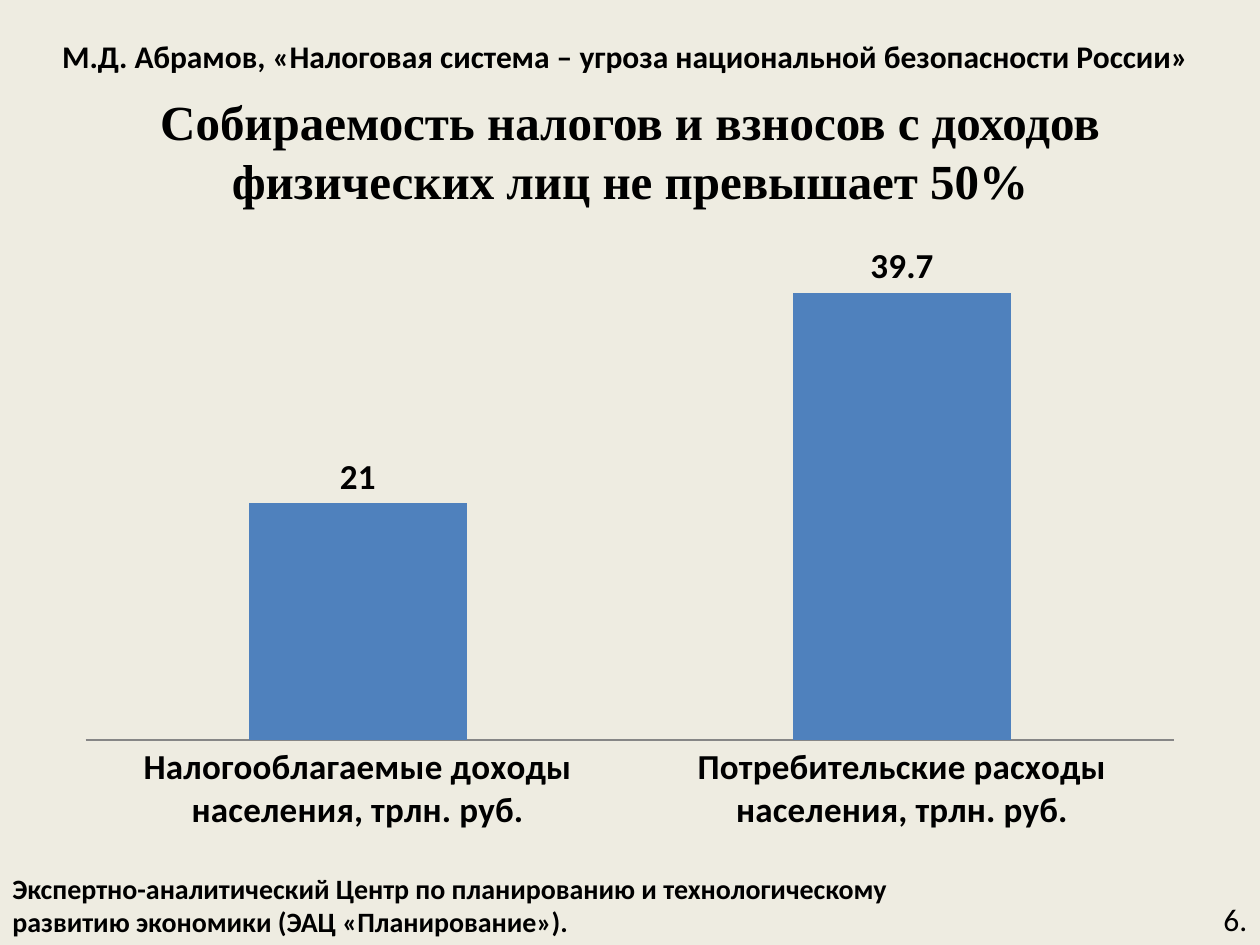
from pptx import Presentation
from pptx.chart.data import CategoryChartData
from pptx.dml.color import RGBColor
from pptx.enum.chart import XL_CHART_TYPE, XL_LABEL_POSITION, XL_TICK_MARK
from pptx.enum.text import MSO_ANCHOR, MSO_AUTO_SIZE, PP_ALIGN
from pptx.util import Pt

COLORS = {"background": "EEECE1", "text": "000000", "bar": "4F81BD", "axis": "868686"}
BODY_FONT, TITLE_FONT = "Calibri", "Times New Roman"


def color(name):
    return RGBColor.from_string(COLORS[name])


def place(sp, box):
    sp.left, sp.top, sp.width, sp.height = (Pt(v) for v in box)


def format_font(font, size, bold=False, name=BODY_FONT):
    font.size, font.bold, font.name = Pt(size), bold, name
    font.color.rgb = color("text")


def write_text(sp, text, size=18, bold=False, font=BODY_FONT, align=PP_ALIGN.LEFT,
               anchor=MSO_ANCHOR.TOP, wrap=True, grow=False, margin_top=3.6):
    tf = sp.text_frame
    tf.auto_size = MSO_AUTO_SIZE.SHAPE_TO_FIT_TEXT if grow else MSO_AUTO_SIZE.NONE
    tf.word_wrap = wrap
    tf.vertical_anchor = anchor
    tf.margin_top = Pt(margin_top)
    for i, line in enumerate(text.split("\n")):
        p = tf.add_paragraph() if i else tf.paragraphs[0]
        p.alignment = align
        r = p.add_run()
        r.text = line
        format_font(r.font, size, bold, font)


def add_text(s, box, text, **style):
    sp = s.shapes.add_textbox(*(Pt(v) for v in box))
    write_text(sp, text, **style)


def add_title(s, box):
    place(s.shapes.title, box)
    write_text(s.shapes.title,
               "Собираемость налогов и взносов с доходов физических лиц не превышает 50%",
               size=28, bold=True, font=TITLE_FONT, align=PP_ALIGN.CENTER, margin_top=17)


def add_income_chart(s, box):
    data = CategoryChartData()
    data.categories = ["Налогооблагаемые доходы населения, трлн. руб.",
                       "Потребительские расходы населения, трлн. руб."]
    data.add_series("Series 1", (21, 39.7))
    chart = s.shapes.add_chart(XL_CHART_TYPE.COLUMN_CLUSTERED,
                               *(Pt(v) for v in box), data).chart
    chart.has_legend = chart.has_title = False
    format_font(chart.font, 10)

    # Axes
    cat_axis, val_axis = chart.category_axis, chart.value_axis
    cat_axis.major_tick_mark = cat_axis.minor_tick_mark = XL_TICK_MARK.NONE
    cat_axis.format.line.color.rgb = color("axis")
    format_font(cat_axis.tick_labels.font, 20, bold=True)
    val_axis.minimum_scale, val_axis.maximum_scale = 0, 45
    val_axis.has_major_gridlines = False
    val_axis.visible = False

    # Columns and their values
    plot = chart.plots[0]
    plot.gap_width, plot.overlap = 150, -25
    plot.vary_by_categories = False
    series = plot.series[0]
    series.format.fill.solid()
    series.format.fill.fore_color.rgb = color("bar")
    labels = series.data_labels
    labels.show_value = True
    labels.position = XL_LABEL_POSITION.OUTSIDE_END
    format_font(labels.font, 20, bold=True)


def add_footer(s, source_box, number_box):
    add_text(s, source_box,
             "Экспертно-аналитический Центр по планированию и технологическому\n"
             "развитию экономики (ЭАЦ «Планирование»).",
             size=16, bold=True, anchor=MSO_ANCHOR.MIDDLE, wrap=False, grow=True)
    add_text(s, number_box, "6.", wrap=False, grow=True)


def main():
    prs = Presentation()
    prs.slide_width, prs.slide_height = Pt(720), Pt(540)
    s = prs.slides.add_slide(prs.slide_layouts[5])
    s.background.fill.solid()
    s.background.fill.fore_color.rgb = color("background")

    add_title(s, (36, 35.3, 648, 59))
    add_footer(s, (0, 494, 523.4, 46), (692, 511, 28, 29))
    add_income_chart(s, (36, 126, 648, 356.4))
    # Author and book
    add_text(s, (8.6, 9.4, 697.7, 44.6),
             "М.Д. Абрамов, «Налоговая система – угроза национальной безопасности России»",
             bold=True, align=PP_ALIGN.CENTER, anchor=MSO_ANCHOR.MIDDLE)
    prs.save("out.pptx")


if __name__ == "__main__":
    main()
